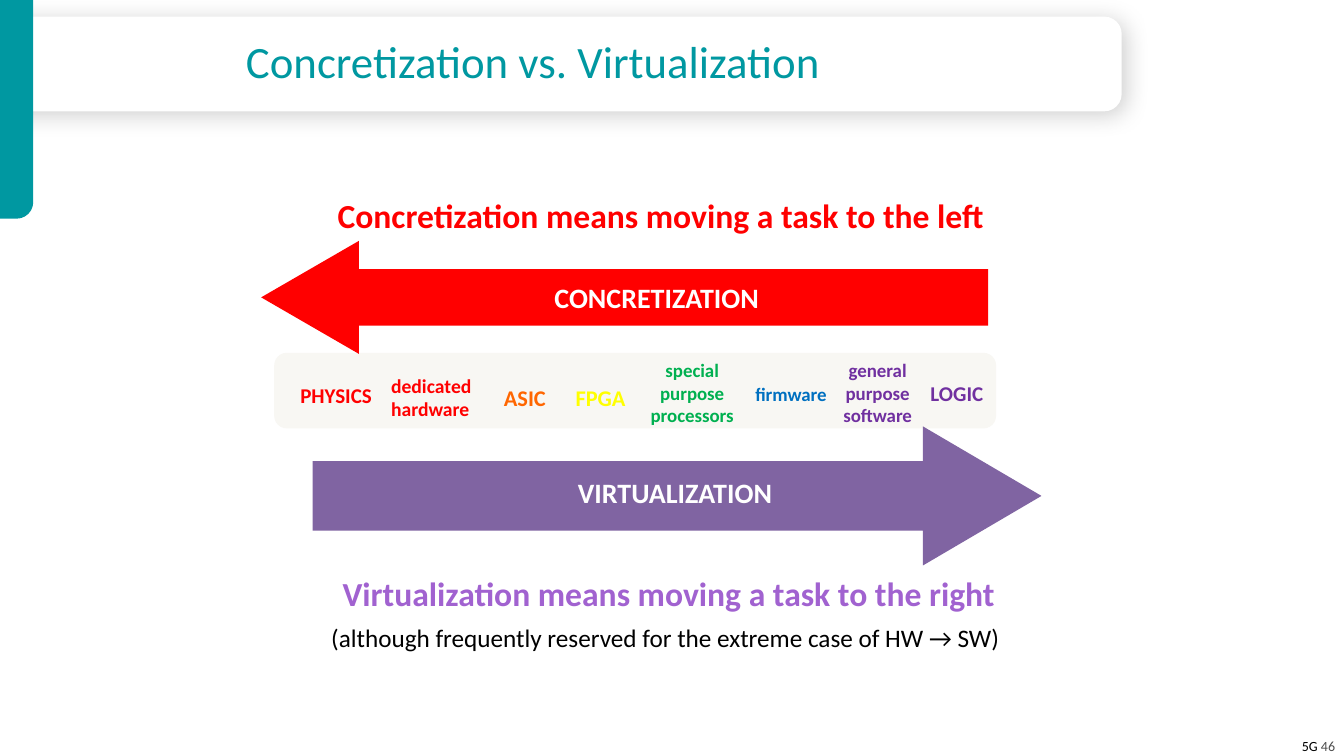
from dataclasses import dataclass

from lxml import etree
from pptx import Presentation
from pptx.dml.color import RGBColor
from pptx.enum.shapes import MSO_SHAPE
from pptx.enum.text import MSO_ANCHOR, PP_ALIGN
from pptx.oxml.ns import qn
from pptx.util import Inches, Pt

LEFT, CENTER, RIGHT = PP_ALIGN.LEFT, PP_ALIGN.CENTER, PP_ALIGN.RIGHT
TOP, MIDDLE = MSO_ANCHOR.TOP, MSO_ANCHOR.MIDDLE
BANNER = MSO_SHAPE.ROUND_2_SAME_RECTANGLE
TAB = MSO_SHAPE.ROUND_1_RECTANGLE
PANEL = MSO_SHAPE.ROUNDED_RECTANGLE
LEFT_ARROW, RIGHT_ARROW = MSO_SHAPE.LEFT_ARROW, MSO_SHAPE.RIGHT_ARROW


@dataclass(frozen=True)
class Theme:
    font: str = "Calibri"
    white: str = "FFFFFF"
    black: str = "000000"
    gray: str = "4D4D4D"
    teal: str = "0098A1"
    panel: str = "F8F7F3"
    red: str = "FF0000"
    orange: str = "FF6600"
    yellow: str = "FFFF00"
    green: str = "00B050"
    blue: str = "0070C0"
    purple: str = "7030A0"
    violet: str = "8064A2"
    lilac: str = "A162D0"
    title: float = 32
    heading: float = 24
    arrow: float = 20
    note: float = 18
    footer: float = 10
    stage_large: float = 16
    stage_end: float = 15
    stage_medium: float = 14
    stage_small: float = 13.5


THEME = Theme()

# Stages from hardware to software: lines, left, top, width, height, size, colour, alignment
STAGES = [
    (["PHYSICS"], 2.88, 3.75, 0.95, 0.35, THEME.stage_end, THEME.red, LEFT),
    (["dedicated hardware"], 3.78, 3.66, 1.09, 0.57, THEME.stage_medium, THEME.red, LEFT),
    (["ASIC"], 4.9, 3.76, 0.68, 0.37, THEME.stage_large, THEME.orange, LEFT),
    (["FPGA"], 5.61, 3.76, 0.72, 0.37, THEME.stage_large, THEME.yellow, LEFT),
    (["special purpose processors"], 6.32, 3.51, 1.09, 0.78, THEME.stage_small, THEME.green, CENTER),
    (["firmware"], 7.3, 3.75, 1.09, 0.33, THEME.stage_small, THEME.blue, CENTER),
    (["general", "purpose", "software"], 8.16, 3.51, 1.09, 0.78, THEME.stage_small, THEME.purple, CENTER),
    (["LOGIC"], 9.13, 3.73, 0.75, 0.35, THEME.stage_end, THEME.purple, LEFT),
]


def add_span(para, text, size, color, bold=False):
    span = para.add_run()
    span.text = text
    span.font.name = THEME.font
    span.font.size = Pt(size)
    span.font.bold = bold
    span.font.color.rgb = RGBColor.from_string(color)


def add_text(shapes, lines, left, top, width, height, size, color,
             align=LEFT, bold=False, anchor=TOP):
    box = shapes.add_textbox(Inches(left), Inches(top), Inches(width), Inches(height))
    frame = box.text_frame
    frame.word_wrap = True
    frame.vertical_anchor = anchor
    for index, line in enumerate(lines):
        para = frame.add_paragraph() if index else frame.paragraphs[0]
        para.alignment = align
        add_span(para, line, size, color, bold)
    return frame


def add_block(shapes, kind, left, top, width, height, color, adjustments=()):
    block = shapes.add_shape(kind, Inches(left), Inches(top), Inches(width), Inches(height))
    block.shadow.inherit = False
    block.fill.solid()
    block.fill.fore_color.rgb = RGBColor.from_string(color)
    block.line.fill.background()
    for index, value in enumerate(adjustments):
        block.adjustments[index] = value
    return block


def add_soft_shadow(block):
    effects = block._element.spPr.find(qn("a:effectLst"))
    shadow = etree.SubElement(effects, qn("a:outerShdw"), blurRad=str(Pt(17)),
                              dist=str(Pt(3)), dir="2700000", algn="tl", rotWithShape="0")
    color = etree.SubElement(shadow, qn("a:srgbClr"), val=THEME.black)
    etree.SubElement(color, qn("a:alpha"), val="19000")


def add_frame(page):
    # Footer, title banner and side tab
    footer = add_text(page.shapes, ["5G "], 12.78, 7.27, 0.56, 0.27,
                      THEME.footer, THEME.black, RIGHT)
    add_span(footer.paragraphs[0], "46", THEME.footer, THEME.gray)
    banner = add_block(page.shapes, BANNER, 5.09, -4.93, 0.94, 11.13, THEME.white, (0.184, 0))
    banner.rotation = 90
    add_soft_shadow(banner)
    tab = add_block(page.shapes, TAB, 0, 0, 0.33, 2.17, THEME.teal, (0.5,))
    tab._element.spPr.find(qn("a:xfrm")).set("flipV", "1")
    title = add_text(page.shapes, ["Concretization vs. Virtualization"],
                     2.37, 0.29, 7.83, 0.71, THEME.title, THEME.teal, anchor=MIDDLE)
    title.margin_left = title.margin_right = Inches(0.07)
    title.margin_top = title.margin_bottom = Inches(0.04)
    title.paragraphs[0].line_spacing = 0.85


def add_stages(page):
    shapes = page.shapes.add_group_shape().shapes
    add_block(shapes, PANEL, 2.72, 3.5, 7.16, 0.75, THEME.panel)
    for stage in STAGES:
        add_text(shapes, *stage, bold=True)


def add_arrow(page, kind, arrow_place, color, head, label, label_place, align, anchor):
    shapes = page.shapes.add_group_shape().shapes
    add_block(shapes, kind, *arrow_place, color, (0.5, head))
    add_text(shapes, [label], *label_place, THEME.arrow, THEME.white, align, True, anchor)


def main():
    deck = Presentation()
    deck.slide_width, deck.slide_height = Inches(13.33), Inches(7.5)
    page = deck.slides.add_slide(deck.slide_layouts[6])
    add_frame(page)
    add_stages(page)

    # Moving left
    add_arrow(page, LEFT_ARROW, (2.59, 2.39, 7.21, 1.12), THEME.red, 0.865,
              "CONCRETIZATION", (5.4, 2.73, 2.32, 0.44), LEFT, TOP)
    add_text(page.shapes, ["Concretization means moving a task to the left"],
             3.25, 1.88, 6.69, 0.5, THEME.heading, THEME.red, bold=True)

    # Moving right
    add_text(page.shapes, ["(although frequently reserved for the extreme case of HW → SW)"],
             2.59, 6.12, 8.02, 0.4, THEME.note, THEME.black, CENTER)
    add_arrow(page, RIGHT_ARROW, (3.1, 4.23, 7.23, 1.38), THEME.violet, 0.852,
              "VIRTUALIZATION", (5.56, 4.68, 2.27, 0.4), CENTER, MIDDLE)
    add_text(page.shapes, ["Virtualization means moving a task to the right"],
             3.3, 5.63, 6.74, 0.5, THEME.heading, THEME.lilac, bold=True, anchor=MIDDLE)

    deck.save("out.pptx")


if __name__ == "__main__":
    main()
